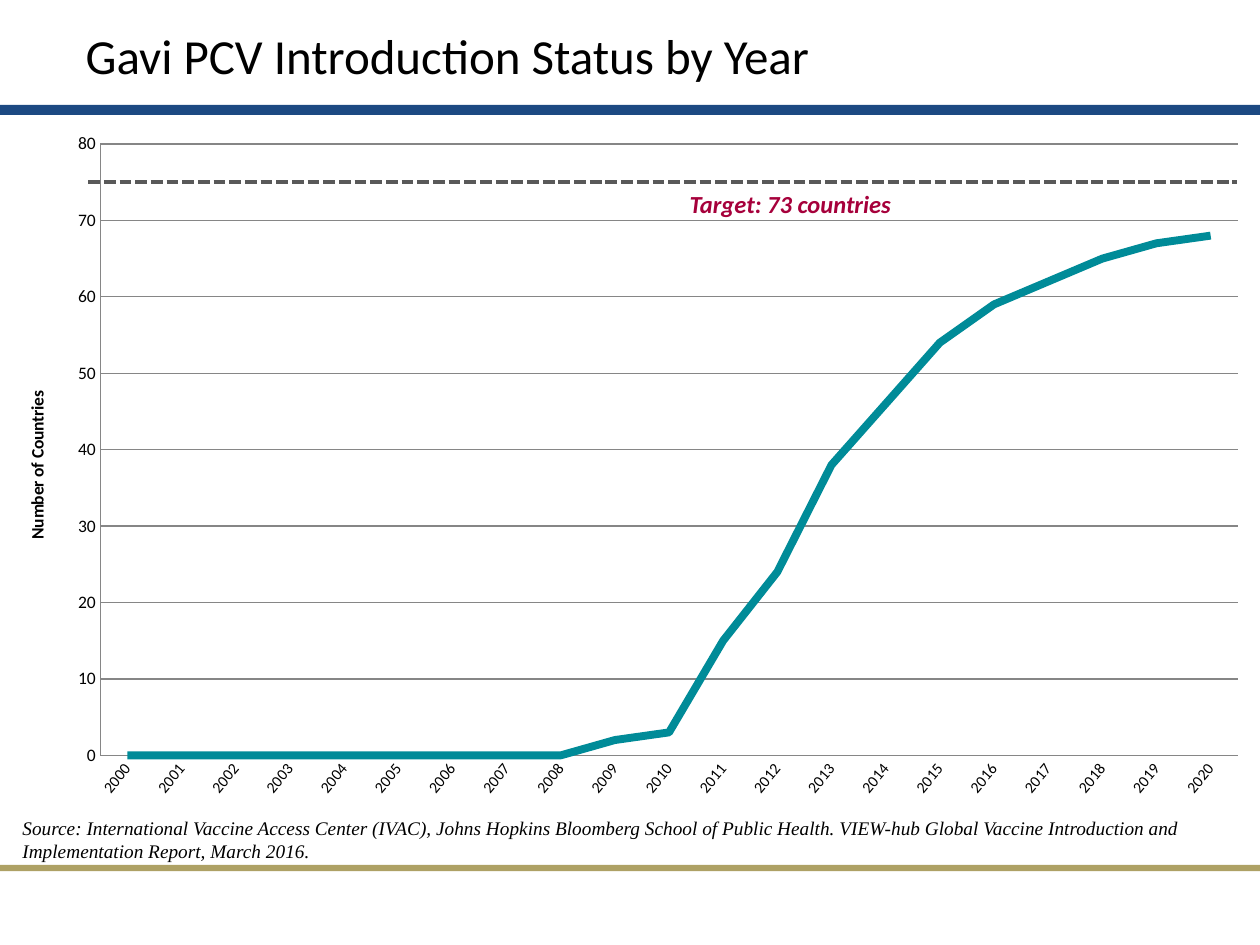
from dataclasses import dataclass
from typing import Any, Optional

from lxml.etree import SubElement
from pptx import Presentation
from pptx.chart.data import CategoryChartData
from pptx.dml.color import RGBColor
from pptx.enum.chart import XL_CHART_TYPE as ChartType, XL_TICK_MARK as Tick
from pptx.enum.dml import MSO_LINE_DASH_STYLE as Dash
from pptx.enum.shapes import MSO_CONNECTOR as Connector, MSO_SHAPE as Shape
from pptx.enum.text import MSO_ANCHOR as Anchor, MSO_AUTO_SIZE as AutoSize, PP_ALIGN as Align
from pptx.oxml import parse_xml
from pptx.oxml.ns import nsdecls, qn
from pptx.util import Inches, Pt

COLS, ROWS = 100, 75
CELL = Inches(0.1)
DEGREE = 60000


@dataclass(frozen=True)
class Theme:
    sans: str = "Calibri"
    serif: str = "Times New Roman"
    black: str = "000000"
    navy: str = "1C4982"
    gold: str = "847013"
    teal: str = "008B98"
    crimson: str = "A6003B"
    dash: str = "595959"
    grid: str = "868686"
    title: float = 28
    target: float = 14
    source: float = 11
    axis: float = 10
    years: float = 9
    series_width: float = 4.5
    target_width: float = 2.25
    grid_width: float = 0.75
    axis_width: float = 0.25


@dataclass(frozen=True)
class Box:
    """A place on the slide in grid columns and rows."""
    col: float
    row: float
    cols: float
    rows: float

    def emu(self) -> tuple[int, ...]:
        return tuple(round(n * CELL) for n in (self.col, self.row, self.cols, self.rows))


@dataclass(frozen=True)
class Band:
    box: Box
    color: str
    opacity: Optional[int] = None


@dataclass(frozen=True)
class Label:
    text: str
    box: Box
    size: float
    font: str
    color: str = Theme.black
    bold: bool = False
    italic: bool = False


THEME = Theme()
BANDS = [
    Band(Box(0, 8.33, COLS, 0.8), THEME.navy),
    Band(Box(0, 68.65, COLS, 0.5), THEME.gold, opacity=65),
]
TITLE = Label("Gavi PCV Introduction Status by Year", Box(5.8, 1.5, 82.5, 9.2), THEME.title, THEME.sans)
SOURCE = Label(
    "Source: International Vaccine Access Center (IVAC), Johns Hopkins Bloomberg School of Public "
    "Health. VIEW-hub Global Vaccine Introduction and Implementation Report, March 2016.",
    Box(0.8, 64.3, 97.4, 4.7), THEME.source, THEME.serif, italic=True)
TARGET = Label("Target: 73 countries", Box(53.75, 14.5, 25.7, 3.3), THEME.target, THEME.sans,
               THEME.crimson, bold=True, italic=True)
TARGET_LINE = Box(7, 14.44, 91.2, 0)
CHART = Box(0, 9.5, 100.2, 54.8)
PLOT = Box(7.97, 11.43, 90.27, 48.53)
AXIS_TITLE = Box(1.78, 30.77, 0, 0)
YEARS = [str(year) for year in range(2000, 2021)]
COUNTRIES = [0] * 9 + [2, 3, 15, 24, 38, 46, 54, 59, 62, 65, 67, 68]


def set_font(font: Any, size: float, name: str, color: str = THEME.black,
             bold: bool = False, italic: bool = False) -> None:
    values = {"size": Pt(size), "name": name, "bold": bold, "italic": italic}
    for key, value in values.items():
        setattr(font, key, value)
    font.color.rgb = RGBColor.from_string(color)


def set_line(line: Any, color: str, width: float) -> None:
    line.color.rgb = RGBColor.from_string(color)
    line.width = Pt(width)


def write_label(sp: Any, label: Label) -> None:
    sp.left, sp.top, sp.width, sp.height = label.box.emu()
    tf = sp.text_frame
    for key, value in {"word_wrap": True, "auto_size": AutoSize.NONE, "vertical_anchor": Anchor.TOP}.items():
        setattr(tf, key, value)
    p = tf.paragraphs[0]
    p.alignment = Align.LEFT
    r = p.add_run()
    r.text = label.text
    set_font(r.font, label.size, label.font, label.color, label.bold, label.italic)


def add_label(s: Any, label: Label) -> None:
    write_label(s.shapes.add_textbox(*label.box.emu()), label)


def add_band(s: Any, band: Band) -> None:
    sp = s.shapes.add_shape(Shape.RECTANGLE, *band.box.emu())
    sp.shadow.inherit = False
    sp.fill.solid()
    sp.fill.fore_color.rgb = RGBColor.from_string(band.color)
    sp.line.fill.background()
    if band.opacity is not None:
        color = sp._element.spPr.find(".//" + qn("a:srgbClr"))
        SubElement(color, qn("a:alpha"), val=str(band.opacity * 1000))


def layout_xml(box: Box, inner: bool) -> Any:
    """Place a chart part by hand, as shares of the chart frame."""
    values = {"xMode": "edge", "yMode": "edge",
              "x": (box.col - CHART.col) / CHART.cols, "y": (box.row - CHART.row) / CHART.rows}
    if inner:
        values = {"layoutTarget": "inner", **values,
                  "w": box.cols / CHART.cols, "h": box.rows / CHART.rows}
    layout = parse_xml(f"<c:layout {nsdecls('c')}><c:manualLayout/></c:layout>")
    for key, value in values.items():
        SubElement(layout[0], qn(f"c:{key}"), val=str(value))
    return layout


def place_part(part: Any, box: Box, before: str, inner: bool = False) -> None:
    for old in part.findall(qn("c:layout")):
        part.remove(old)
    part.find(qn(before)).addprevious(layout_xml(box, inner))


def rotate_text(part: Any, degrees: int) -> None:
    part.find(".//" + qn("a:bodyPr")).set("rot", str(degrees * DEGREE))


def add_countries_chart(s: Any) -> None:
    data = CategoryChartData()
    data.categories = YEARS
    data.add_series("Series 1", COUNTRIES)
    chart = s.shapes.add_chart(ChartType.LINE, *CHART.emu(), data).chart
    chart.has_legend = chart.has_title = False
    set_font(chart.font, THEME.axis, THEME.sans)

    plot = chart.plots[0]
    plot.vary_by_categories = False
    series = plot.series[0]
    series.smooth = False
    set_line(series.format.line, THEME.teal, THEME.series_width)

    years, values = chart.category_axis, chart.value_axis
    for axis, size in ((years, THEME.years), (values, THEME.axis)):
        axis.major_tick_mark = axis.minor_tick_mark = Tick.NONE
        set_font(axis.tick_labels.font, size, THEME.sans)
        set_line(axis.format.line, THEME.grid, THEME.axis_width)
    rotate_text(years._element.find(qn("c:txPr")), -50)
    for key, value in {"minimum_scale": 0, "maximum_scale": 80, "major_unit": 10}.items():
        setattr(values, key, value)
    set_line(values.major_gridlines.format.line, THEME.grid, THEME.grid_width)

    title = values.axis_title
    r = title.text_frame.paragraphs[0].add_run()
    r.text = "Number of Countries"
    set_font(r.font, THEME.axis, THEME.sans, bold=True)
    rotate_text(title._element, -90)
    place_part(title._element, AXIS_TITLE, "c:overlay")
    place_part(plot._element.getparent(), PLOT, "c:lineChart", inner=True)


def add_target_line(s: Any) -> None:
    x, y, width, _ = TARGET_LINE.emu()
    line = s.shapes.add_connector(Connector.STRAIGHT, x, y, x + width, y)
    set_line(line.line, THEME.dash, THEME.target_width)
    line.line.dash_style = Dash.SQUARE_DOT
    SubElement(line._element.spPr, qn("a:effectLst"))


def main() -> None:
    prs = Presentation()
    prs.slide_width, prs.slide_height = COLS * CELL, ROWS * CELL
    s = prs.slides.add_slide(prs.slide_layouts[5])
    for band in BANDS:
        add_band(s, band)
    write_label(s.shapes.title, TITLE)
    add_label(s, SOURCE)
    add_countries_chart(s)
    add_target_line(s)
    add_label(s, TARGET)
    prs.save("out.pptx")


if __name__ == "__main__":
    main()
